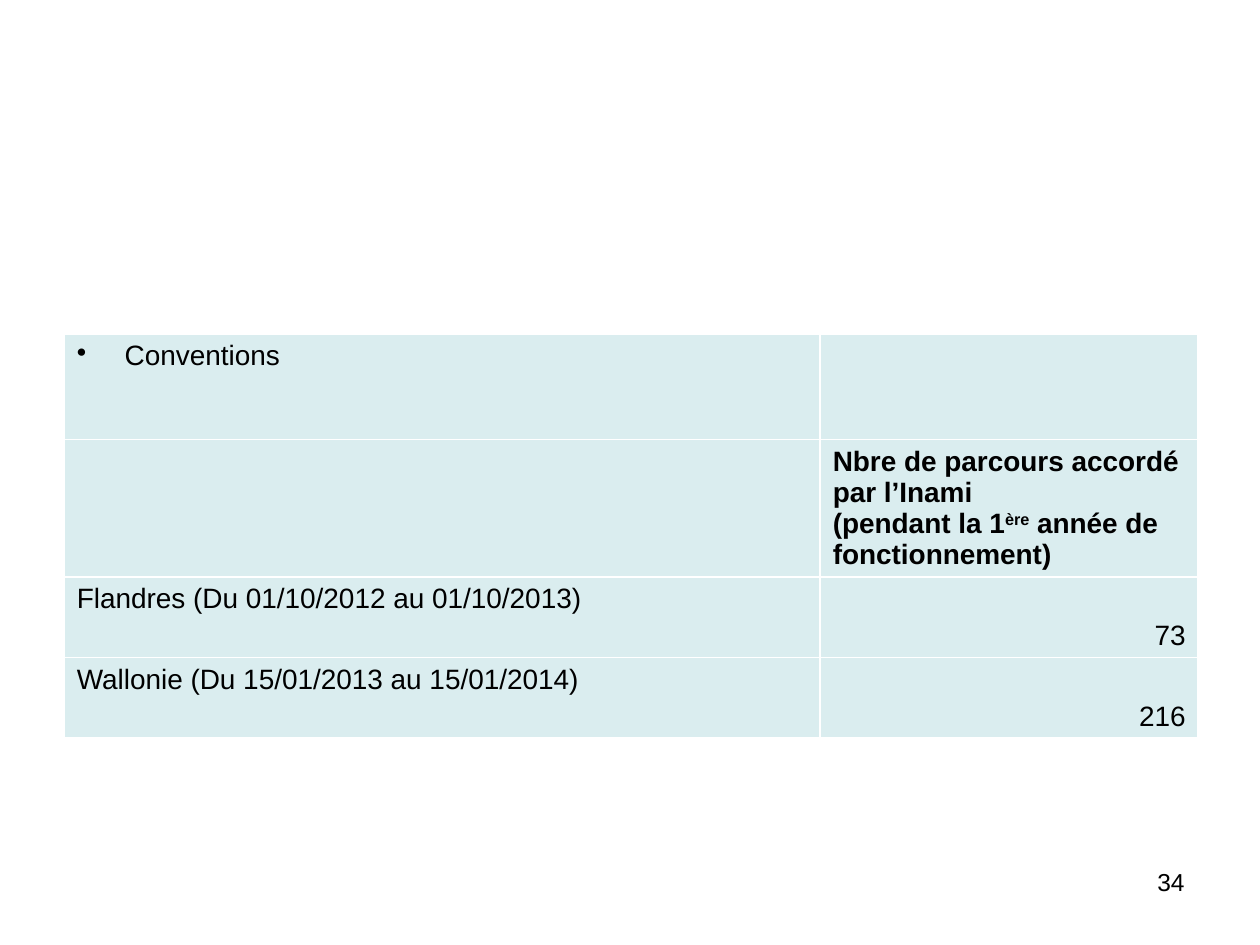
"""Build the slide with the table of conventions by region."""
from dataclasses import dataclass

from lxml.etree import SubElement
from pptx import Presentation
from pptx.dml.color import RGBColor
from pptx.enum.text import MSO_ANCHOR, PP_ALIGN
from pptx.oxml.ns import qn
from pptx.util import Inches, Pt


@dataclass
class Entry:
    row: int
    col: int
    lines: list[list[str]]
    bold: bool = False
    right: bool = False
    bullet: bool = False


ENTRIES = [
    Entry(0, 0, [["Conventions"]], bullet=True),
    Entry(1, 1, [["Nbre de parcours accordé par l’Inami"],
                 ["(pendant la 1", "ère", " année de fonctionnement)"]], bold=True),
    Entry(2, 0, [["Flandres (Du 01/10/2012 au 01/10/2013)"]]),
    Entry(2, 1, [["73"]], right=True),
    Entry(3, 0, [["Wallonie (Du 15/01/2013 au 15/01/2014)"]]),
    Entry(3, 1, [["216"]], right=True),
]
COLS = [6, 3]
ROWS = [0.84, 1.09, 0.64, 0.64]


def color(code: str) -> RGBColor:
    return RGBColor.from_string(code)


def style(para, size: float, bold: bool = False, right: bool = False) -> None:
    para.alignment = PP_ALIGN.RIGHT if right else PP_ALIGN.LEFT
    font = para.font
    font.name, font.size, font.bold = "Arial", Pt(size), bold
    font.color.rgb = color("000000")


def add_bullet(para) -> None:
    props = para._p.get_or_add_pPr()
    props.set("marL", str(Inches(0.38)))
    props.set("indent", str(-Inches(0.38)))
    SubElement(props, qn("a:buChar")).set("char", "•")


def paint(cell) -> None:
    props = cell._tc.get_or_add_tcPr()
    for side in ("lnL", "lnR", "lnT", "lnB"):
        line = SubElement(props, qn(f"a:{side}"), w=str(Pt(1)))
        fill = SubElement(line, qn("a:solidFill"))
        SubElement(fill, qn("a:srgbClr"), val="FFFFFF")
    cell.fill.solid()
    cell.fill.fore_color.rgb = color("DAEDEF")


def write(cell, entry: Entry) -> None:
    frame = cell.text_frame
    if entry.right:
        cell.vertical_anchor = MSO_ANCHOR.BOTTOM
    for i, parts in enumerate(entry.lines):
        para = frame.add_paragraph() if i else frame.paragraphs[0]
        if entry.bullet:
            add_bullet(para)
        style(para, 16, entry.bold, entry.right)
        for part in parts:
            run = para.add_run()
            run.text = part
            if part == "ère":
                run._r.get_or_add_rPr().set("baseline", "30000")


def add_grid(slide) -> None:
    table = slide.shapes.add_table(
        len(ROWS), len(COLS), Inches(0.51), Inches(2.65),
        Inches(sum(COLS)), Inches(sum(ROWS))).table
    table.first_row = table.horz_banding = False
    for col, width in zip(table.columns, COLS):
        col.width = Inches(width)
    for row, height in zip(table.rows, ROWS):
        row.height = Inches(height)
    for cell in table.iter_cells():
        paint(cell)
    for entry in ENTRIES:
        write(table.cell(entry.row, entry.col), entry)


def add_number(slide) -> None:
    box = slide.shapes.add_textbox(
        Inches(7.17), Inches(6.83), Inches(2.33), Inches(0.52))
    box.text_frame.word_wrap = True
    para = box.text_frame.paragraphs[0]
    para.text = "34"
    style(para, 14, right=True)


def main() -> None:
    deck = Presentation()
    deck.slide_width, deck.slide_height = Inches(10), Inches(7.5)
    slide = deck.slides.add_slide(deck.slide_layouts[6])
    add_grid(slide)
    add_number(slide)
    deck.save("out.pptx")


if __name__ == "__main__":
    main()
